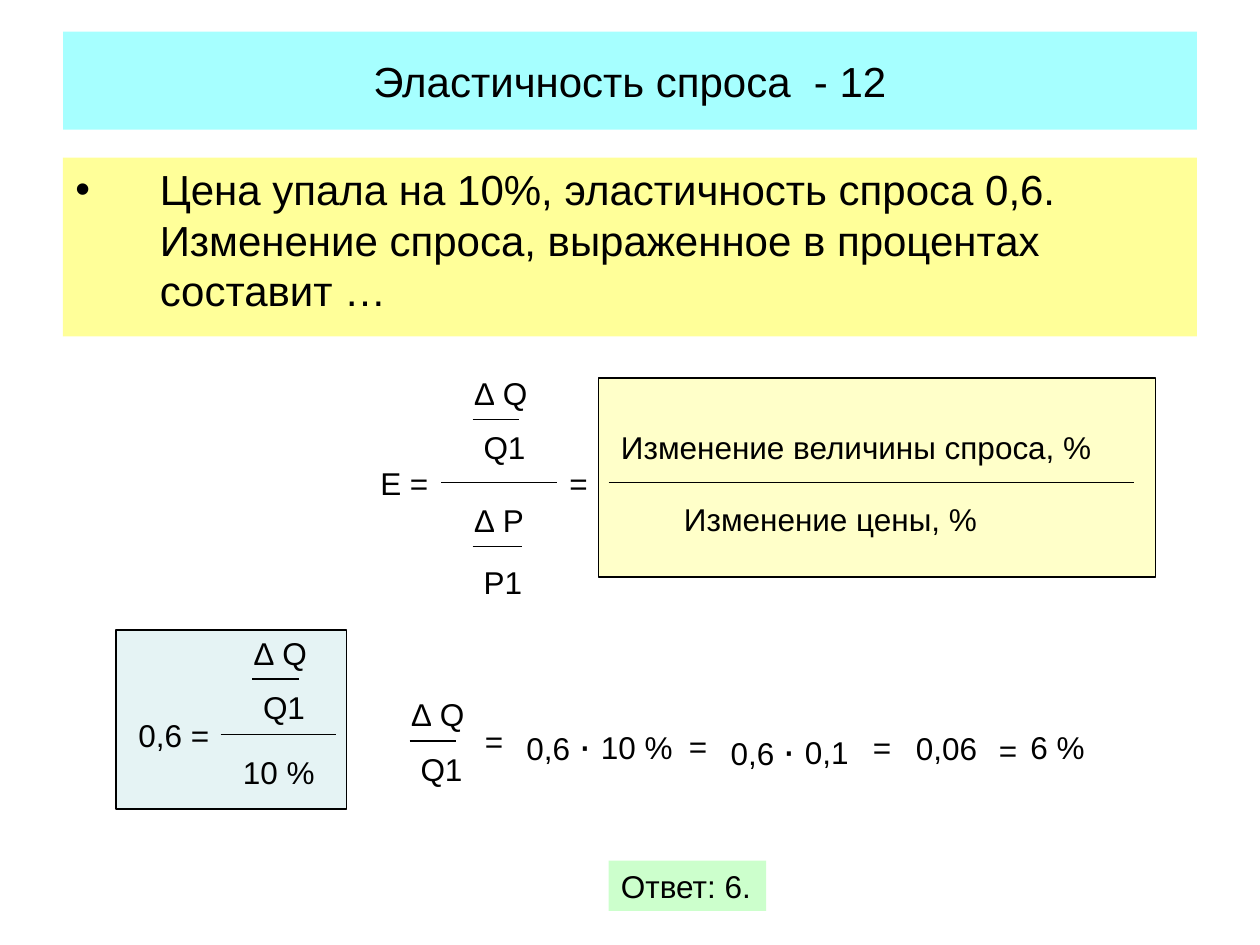
from dataclasses import dataclass
from typing import NamedTuple, Optional

from lxml import etree
from pptx import Presentation
from pptx.dml.color import RGBColor
from pptx.enum.shapes import MSO_CONNECTOR, MSO_SHAPE
from pptx.enum.text import MSO_ANCHOR, PP_ALIGN
from pptx.oxml.ns import qn
from pptx.util import Inches, Pt

RECT = MSO_SHAPE.RECTANGLE
STRAIGHT = MSO_CONNECTOR.STRAIGHT
TOP, MIDDLE = MSO_ANCHOR.TOP, MSO_ANCHOR.MIDDLE
LEFT, CENTER = PP_ALIGN.LEFT, PP_ALIGN.CENTER
TITLE_ONLY = 5


@dataclass(frozen=True)
class Theme:
    font: str = "Arial"
    ink: str = "000000"
    aqua: str = "00FFFF"
    yellow: str = "FFFF99"
    teal: str = "BBE0E3"
    green: str = "CCFFCC"
    large: int = 24
    normal: int = 18
    line: float = 0.75


class Box(NamedTuple):
    x: float
    y: float
    w: float
    h: float


class Label(NamedTuple):
    text: str
    x: float
    y: float
    w: float
    h: float = 0.4


class Fraction(NamedTuple):
    top: str
    bottom: str
    x: float
    y: float
    w: float = 0.67
    drop: float = 0.43
    bar: float = 0.37


class Rule(NamedTuple):
    x1: float
    x2: float
    y: float


T = Theme()
DOT = "∙"

FRACTIONS = [
    Fraction("∆ Q", " Q1", 3.67, 2.92),
    Fraction("∆ Р", " Р1", 3.67, 3.93, 0.75, 0.49, 0.39),
    Fraction("∆ Q", " Q1", 1.92, 4.98),
    Fraction("∆ Q", " Q1", 3.17, 5.47),
]
RULES = [Rule(3.5, 4.42, 3.83), Rule(4.83, 9, 3.83), Rule(1.75, 2.67, 5.83)]
LABELS = [
    # Elasticity formula
    Label("Е =", 2.92, 3.63, 0.67),
    Label("=", 4.42, 3.63, 0.33),
    Label("Изменение величины спроса, %", 4.83, 3.35, 4.08),
    Label("Изменение цены, %", 5.33, 3.92, 2.92),
    # Known values
    Label("0,6 =", 1, 5.63, 1),
    Label("10 %", 1.83, 5.93, 0.83),
    # Calculation
    Label("=", 3.75, 5.68, 0.33),
    Label("0,6 ∙", 4.08, 5.65, 0.75, 0.5),
    Label("10 %", 4.67, 5.73, 0.83),
    Label("=", 5.37, 5.72, 0.33),
    Label("0,6 ∙", 5.7, 5.69, 0.75, 0.5),
    Label("0,1", 6.29, 5.77, 0.75),
    Label("=", 6.83, 5.73, 0.33),
    Label("0,06", 7.17, 5.74, 0.75),
    Label("=", 7.83, 5.75, 0.33),
    Label("6 %", 8.08, 5.73, 0.75),
]


def inches(box: Box) -> list:
    return [Inches(v) for v in box]


def add_run(p, text: str, size: int) -> None:
    r = p.add_run()
    r.text = text
    r.font.name = T.font
    r.font.size = Pt(size)
    r.font.color.rgb = RGBColor.from_string(T.ink)


def set_fill(sp, color: str, opacity: Optional[int] = None) -> None:
    sp.fill.solid()
    sp.fill.fore_color.rgb = RGBColor.from_string(color)
    if opacity is not None:
        clr = sp._element.spPr.find(qn("a:solidFill")).find(qn("a:srgbClr"))
        etree.SubElement(clr, qn("a:alpha"), val=str(opacity * 1000))


def add_panel(s, box: Box, color: str, opacity: Optional[int] = None,
              outlined: bool = False):
    sp = s.shapes.add_shape(RECT, *inches(box))
    sp.shadow.inherit = False
    set_fill(sp, color, opacity)
    if outlined:
        sp.line.color.rgb = RGBColor.from_string(T.ink)
        sp.line.width = Pt(T.line)
    else:
        sp.line.fill.background()
    return sp


def start_text(sp, anchor=TOP, align=LEFT):
    tf = sp.text_frame
    tf.word_wrap = True
    tf.vertical_anchor = anchor
    p = tf.paragraphs[0]
    p.alignment = align
    return p


def add_label(s, label: Label) -> None:
    sp = s.shapes.add_textbox(*inches(Box(*label[1:])))
    p = start_text(sp)
    words, dot, _ = label.text.partition(DOT)
    add_run(p, words, T.normal)
    if dot:
        add_run(p, dot, T.large)


def add_rule(s, rule: Rule) -> None:
    y = Inches(rule.y)
    c = s.shapes.add_connector(STRAIGHT, Inches(rule.x1), y, Inches(rule.x2), y)
    c.line.color.rgb = RGBColor.from_string(T.ink)
    c.line.width = Pt(T.line)
    etree.SubElement(c._element.spPr, qn("a:effectLst"))


def add_fraction(s, f: Fraction) -> None:
    add_label(s, Label(f.top, f.x, f.y, f.w))
    add_label(s, Label(f.bottom, f.x, f.y + f.drop, f.w))
    start = f.x + 0.08
    add_rule(s, Rule(start, start + f.bar, f.y + 0.41))


def add_bullet(p, indent: float) -> None:
    pPr = p._p.get_or_add_pPr()
    pPr.set("marL", str(Inches(indent)))
    pPr.set("indent", str(-Inches(indent)))
    etree.SubElement(pPr, qn("a:buFont"), typeface=T.font)
    etree.SubElement(pPr, qn("a:buChar"), char="•")


def main() -> None:
    prs = Presentation()
    prs.slide_width, prs.slide_height = Inches(10), Inches(7.5)
    s = prs.slides.add_slide(prs.slide_layouts[TITLE_ONLY])

    # Title
    title = s.shapes.title
    title.left, title.top, title.width, title.height = inches(Box(0.5, 0.25, 9, 0.78))
    set_fill(title, T.aqua, 35)
    add_run(start_text(title, MIDDLE, CENTER), "Эластичность спроса  - 12", T.large)

    # Problem statement
    problem = add_panel(s, Box(0.5, 1.25, 9, 1.42), T.yellow)
    p = start_text(problem)
    add_bullet(p, 0.67)
    add_run(p, "Цена упала на 10%, эластичность спроса 0,6. Изменение спроса, "
               "выраженное в процентах составит …", T.large)

    # Formula panels
    add_panel(s, Box(0.92, 5, 1.83, 1.42), T.teal, 37, outlined=True)
    add_panel(s, Box(4.75, 3, 4.42, 1.58), T.yellow, 53, outlined=True)

    # Formulas
    for fraction in FRACTIONS:
        add_fraction(s, fraction)
    for rule in RULES:
        add_rule(s, rule)
    for label in LABELS:
        add_label(s, label)

    # Answer
    answer = add_panel(s, Box(4.83, 6.83, 1.25, 0.4), T.green)
    add_run(start_text(answer), "Ответ: 6.", T.normal)

    prs.save("out.pptx")


if __name__ == "__main__":
    main()
